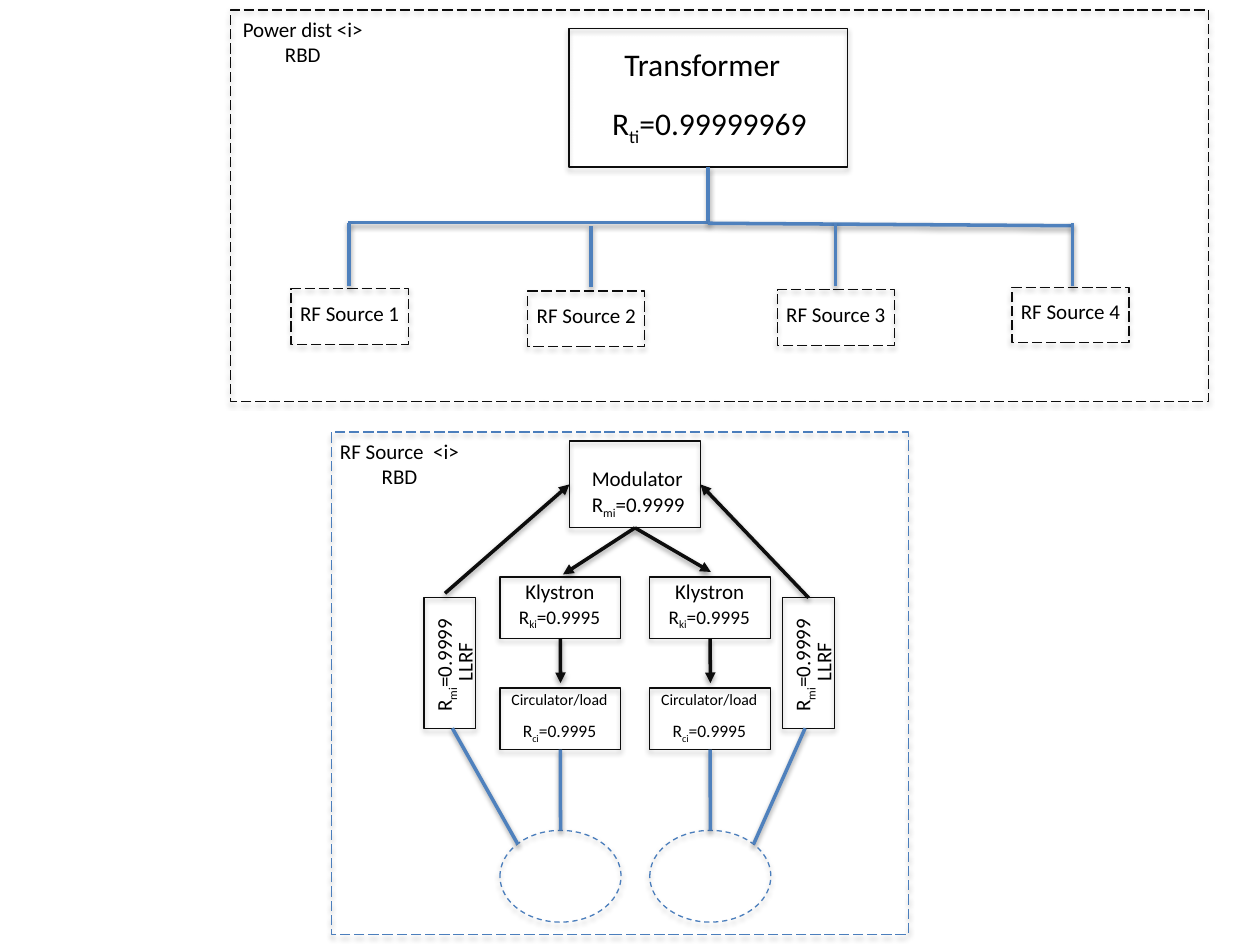
"""Build the power distribution and RF source reliability block diagrams."""
from dataclasses import dataclass
from typing import Optional

from lxml.etree import SubElement
from pptx import Presentation
from pptx.dml.color import RGBColor
from pptx.enum.dml import MSO_LINE as DASH
from pptx.enum.shapes import MSO_CONNECTOR as CONN, MSO_SHAPE as SHAPE
from pptx.enum.text import MSO_AUTO_SIZE as AUTO, PP_ALIGN as ALIGN
from pptx.oxml.ns import qn
from pptx.util import Cm, Pt

BLACK = RGBColor(0x00, 0x00, 0x00)
INK = RGBColor(0x0D, 0x0D, 0x0D)
OUTLINE_BLUE = RGBColor(0x4B, 0x7E, 0xBC)
WIRE_BLUE = RGBColor(0x4F, 0x81, 0xBD)
FONT = "Calibri"
CHAIN_PITCH = 3.02
LLRF_PITCH = 7.23
JOIN_TOLERANCE = Cm(0.04)


@dataclass
class Box:
    x: float
    y: float
    w: float
    h: float
    color: RGBColor = INK
    dash: Optional[DASH] = None
    kind: SHAPE = SHAPE.RECTANGLE


@dataclass
class Label:
    x: float
    y: float
    w: float
    h: float
    text: str
    size: int = 12
    rotation: int = 0
    align: ALIGN = ALIGN.LEFT


@dataclass
class Wire:
    x1: float
    y1: float
    x2: float
    y2: float
    color: RGBColor = WIRE_BLUE
    arrow: str = ""


def add_shadow(sp, alpha: int, dist: float) -> None:
    """Give a shape or connector a soft shadow below it."""
    effects = SubElement(sp._element.spPr, qn("a:effectLst"))
    outer = SubElement(effects, qn("a:outerShdw"), blurRad=str(Pt(3.1)),
                       dist=str(Pt(dist)), dir="5400000", rotWithShape="0")
    color = SubElement(outer, qn("a:srgbClr"), val="000000")
    SubElement(color, qn("a:alpha"), val=str(alpha * 1000))


def draw_box(s, box: Box):
    """Draw an unfilled outline shape and return it."""
    sp = s.shapes.add_shape(box.kind, Cm(box.x), Cm(box.y), Cm(box.w), Cm(box.h))
    sp.fill.background()
    sp.line.color.rgb = box.color
    sp.line.width = Pt(0.75)
    if box.dash:
        sp.line.dash_style = box.dash
    add_shadow(sp, 35, 1.8)
    return sp


def draw_label(s, label: Label) -> None:
    """Draw a text box, with parts between bars set as subscripts."""
    sp = s.shapes.add_textbox(Cm(label.x), Cm(label.y), Cm(label.w), Cm(label.h))
    sp.rotation = label.rotation
    tf = sp.text_frame
    tf.word_wrap = False
    tf.auto_size = AUTO.SHAPE_TO_FIT_TEXT
    for i, line in enumerate(label.text.split("\n")):
        p = tf.add_paragraph() if i else tf.paragraphs[0]
        p.alignment = label.align
        for j, part in enumerate(line.split("|")):
            r = p.add_run()
            r.text = part
            r.font.name = FONT
            r.font.size = Pt(label.size)
            r.font.color.rgb = BLACK
            if j % 2:
                r._r.get_or_add_rPr().set("baseline", "-25000")


def find_site(x: int, y: int, shapes: list) -> Optional[tuple]:
    """Find the shape and side whose middle lies at a point."""
    for sp in shapes:
        mid_x, mid_y = sp.left + sp.width // 2, sp.top + sp.height // 2
        sites = ((mid_x, sp.top), (sp.left, mid_y),
                 (mid_x, sp.top + sp.height), (sp.left + sp.width, mid_y))
        for side, (site_x, site_y) in enumerate(sites):
            if max(abs(site_x - x), abs(site_y - y)) <= JOIN_TOLERANCE:
                return sp, side
    return None


def style_wire(c, color: RGBColor) -> None:
    """Set the line and shadow of a connector."""
    c.line.color.rgb = color
    c.line.width = Pt(2)
    add_shadow(c, 38, 1.6)


def draw_wire(s, wire: Wire, shapes: list) -> None:
    """Draw a straight connector, joined to the shapes it touches."""
    start, end = (Cm(wire.x1), Cm(wire.y1)), (Cm(wire.x2), Cm(wire.y2))
    c = s.shapes.add_connector(CONN.STRAIGHT, *start, *end)
    for point, join in ((start, c.begin_connect), (end, c.end_connect)):
        site = find_site(*point, shapes)
        if site:
            join(*site)
    style_wire(c, wire.color)
    if wire.arrow:
        SubElement(c.line._get_or_add_ln(), qn(f"a:{wire.arrow}"), type="triangle")


def draw_bus_elbow(s) -> None:
    """Draw the bent connector from the transformer to the left end of the bus."""
    c = s.shapes.add_connector(CONN.ELBOW, Cm(10.08), Cm(0.3), Cm(11.2), Cm(7.56))
    pr = c._element.spPr
    pr.find(qn("a:xfrm")).set("rot", "5400000")
    pr.find(qn("a:prstGeom")).set("prst", "bentConnector2")
    style_wire(c, WIRE_BLUE)


def main() -> None:
    """Lay out both diagrams and save the deck."""
    prs = Presentation()
    prs.slide_width, prs.slide_height = Cm(25.4), Cm(19.05)
    s = prs.slides.add_slide(prs.slide_layouts[6])

    boxes = [
        Box(4.65, 0.2, 19.71, 7.9, dash=DASH.LONG_DASH),
        Box(6.68, 8.71, 11.63, 10.13, OUTLINE_BLUE, DASH.LONG_DASH),
        Box(11.47, 0.58, 5.62, 2.79),
        Box(11.48, 8.89, 2.64, 1.75),
    ]
    labels = [
        Label(4.62, 0.2, 2.97, 1.27, "Power dist <i>\nRBD", align=ALIGN.CENTER),
        Label(6.58, 8.71, 2.95, 1.27, "RF Source  <i>\nRBD", align=ALIGN.CENTER),
        Label(12.34, 0.79, 3.76, 1.02, "Transformer", 18),
        Label(12.09, 1.98, 4.5, 1.02, "R|ti|=0.99999969", 18),
        Label(11.68, 9.27, 2.36, 0.76, "Modulator"),
        Label(11.68, 9.78, 2.44, 0.76, "R|mi|=0.9999"),
    ]
    wires = [
        Wire(14.27, 4.5, 21.62, 4.55),
        Wire(7.04, 5.77, 7.04, 4.5),
        Wire(11.91, 5.79, 11.91, 4.55),
        Wire(16.84, 5.77, 16.84, 4.5),
        Wire(21.62, 5.77, 21.62, 4.5),
        Wire(12.8, 10.64, 11.35, 11.58, INK, "tailEnd"),
        Wire(12.8, 10.64, 14.33, 11.53, INK, "tailEnd"),
        Wire(14.12, 9.77, 16.3, 12.05, INK, "headEnd"),
        Wire(11.48, 9.77, 8.97, 11.96, INK, "headEnd"),
        Wire(9.12, 14.68, 10.44, 17.02),
        Wire(16.23, 14.68, 15.19, 17.02),
    ]

    sources = ((5.87, 5.82), (10.64, 5.87), (15.67, 5.84), (20.4, 5.79))
    for number, (x, y) in enumerate(sources, 1):
        boxes.append(Box(x, y, 2.36, 1.12, dash=DASH.LONG_DASH))
        labels.append(Label(x - 0.07, y + 0.11, 2.54, 0.76, f"RF Source {number}"))

    for side in range(2):
        dx = side * CHAIN_PITCH
        boxes += [
            Box(10.08 + dx, 11.63, 2.43, 1.24),
            Box(10.08 + dx, 13.87, 2.43, 1.24),
            Box(10.08 + dx, 16.74, 2.44, 1.85, OUTLINE_BLUE, DASH.DASH, SHAPE.OVAL),
        ]
        labels += [
            Label(10.34 + dx, 11.53, 1.93, 0.76, "Klystron"),
            Label(10.21 + dx, 12.07, 2.18, 0.74, "R|ki|=0.9995", 11),
            Label(10.06 + dx, 13.77, 2.49, 0.64, "Circulator/load", 9),
            Label(10.29 + dx, 14.4, 2.03, 0.69, "R|ci|=0.9995", 10),
        ]
        wires += [
            Wire(11.3 + dx, 12.87, 11.3 + dx, 13.77, INK, "tailEnd"),
            Wire(11.3 + dx, 15.11, 11.3 + dx, 16.74),
        ]
        dx = side * LLRF_PITCH
        boxes.append(Box(8.55 + dx, 12.05, 1.04, 2.64))
        labels += [
            Label(8.71 + dx, 12.95, 1.3, 0.76, "LLRF", rotation=270),
            Label(7.72 + dx, 13.0, 2.44, 0.76, "R|mi|=0.9999", rotation=270),
        ]

    shapes = [draw_box(s, box) for box in boxes]
    draw_bus_elbow(s)
    for wire in wires:
        draw_wire(s, wire, shapes)
    for label in labels:
        draw_label(s, label)
    prs.save("out.pptx")


if __name__ == "__main__":
    main()
